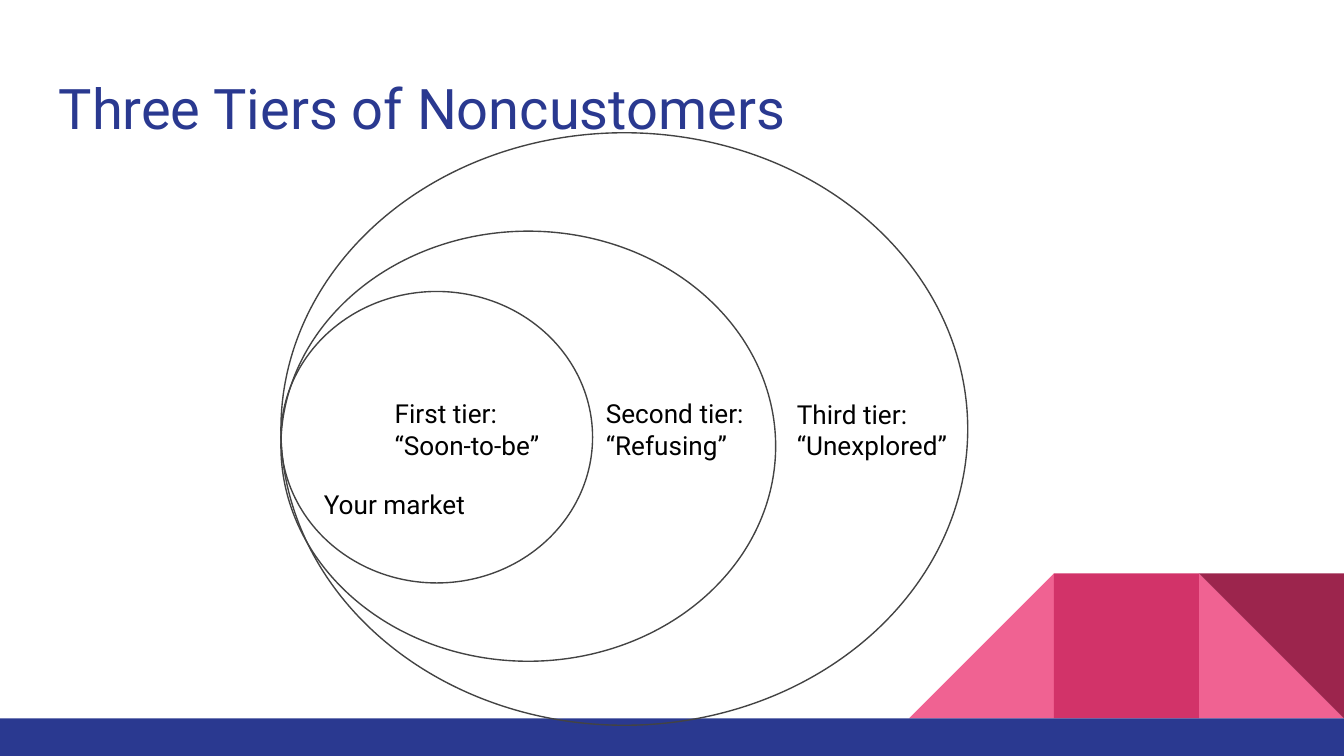
from pptx import Presentation
from pptx.dml.color import RGBColor
from pptx.enum.shapes import MSO_SHAPE
from pptx.enum.text import MSO_ANCHOR, PP_ALIGN
from pptx.util import Cm, Pt

COLORS = {
    "navy": "2A3990",
    "pink": "F06292",
    "rose": "D23369",
    "wine": "9C254D",
    "outline": "434343",
    "text": "000000",
}
WIDTH, HEIGHT = 25.4, 14.29
BAR_HEIGHT = 0.71
TILE = 2.74


def add_figure(kind, left, top, width, height, fill=None):
    """Add a flat shape: filled without a line, or outlined without a fill."""
    figure = slide.shapes.add_shape(kind, Cm(left), Cm(top), Cm(width), Cm(height))
    figure.shadow.inherit = False
    if fill:
        figure.fill.solid()
        figure.fill.fore_color.rgb = RGBColor.from_string(COLORS[fill])
        figure.line.fill.background()
    else:
        figure.fill.background()
        figure.line.color.rgb = RGBColor.from_string(COLORS["outline"])
        figure.line.width = Pt(0.75)
    return figure


def write_lines(holder, lines, size=14, color="text", anchor=MSO_ANCHOR.TOP):
    frame = holder.text_frame
    frame_format = {"word_wrap": True, "vertical_anchor": anchor}
    for side in ("left", "right", "top", "bottom"):
        frame_format[f"margin_{side}"] = Cm(0.25)
    for name, value in frame_format.items():
        setattr(frame, name, value)
    frame.text = "\n".join(lines)
    for paragraph in frame.paragraphs:
        paragraph.alignment = PP_ALIGN.LEFT
        paragraph.font.name = "Roboto"
        paragraph.font.size = Pt(size)
        paragraph.font.color.rgb = RGBColor.from_string(COLORS[color])


deck = Presentation()
deck.slide_width, deck.slide_height = Cm(WIDTH), Cm(HEIGHT)
slide = deck.slides.add_slide(deck.slide_layouts[6])

# Corner decoration: tiles counted from the right edge, standing on the bar
bar_top = HEIGHT - BAR_HEIGHT
for kind, column, rotation, fill in [
    (MSO_SHAPE.RIGHT_TRIANGLE, 1, 0, "pink"),
    (MSO_SHAPE.RIGHT_TRIANGLE, 3, 270, "pink"),
    (MSO_SHAPE.RECTANGLE, 2, 0, "rose"),
    (MSO_SHAPE.RIGHT_TRIANGLE, 1, 180, "wine"),
]:
    tile = add_figure(kind, WIDTH - column * TILE, bar_top - TILE, TILE, TILE, fill)
    tile.rotation = rotation
add_figure(MSO_SHAPE.RECTANGLE, 0, bar_top, WIDTH, BAR_HEIGHT, "navy")

title = slide.shapes.add_textbox(Cm(0.86), Cm(1.15), Cm(23.67), Cm(1.68))
write_lines(title, ["Three Tiers of Noncustomers"], size=30, color="navy")

# Nested tiers share their left edge, from the inside out
for top, width, height in [(5.51, 5.89, 5.51), (4.37, 9.35, 8.13), (2.51, 12.98, 11.2)]:
    tier = add_figure(MSO_SHAPE.OVAL, 5.31, top, width, height)
write_lines(tier, ["First tier:", "“Soon-to-be”"], anchor=MSO_ANCHOR.MIDDLE)

for left, top, width, height, lines in [
    (11.2, 7.27, 3.45, 1.98, ["Second tier:", "“Refusing”"]),
    (14.81, 7.28, 3.73, 1.68, ["Third tier:", "“Unexplored”"]),
    (5.87, 8.98, 3.86, 1.68, ["Your market"]),
]:
    label = slide.shapes.add_textbox(Cm(left), Cm(top), Cm(width), Cm(height))
    write_lines(label, lines)

deck.save("out.pptx")
